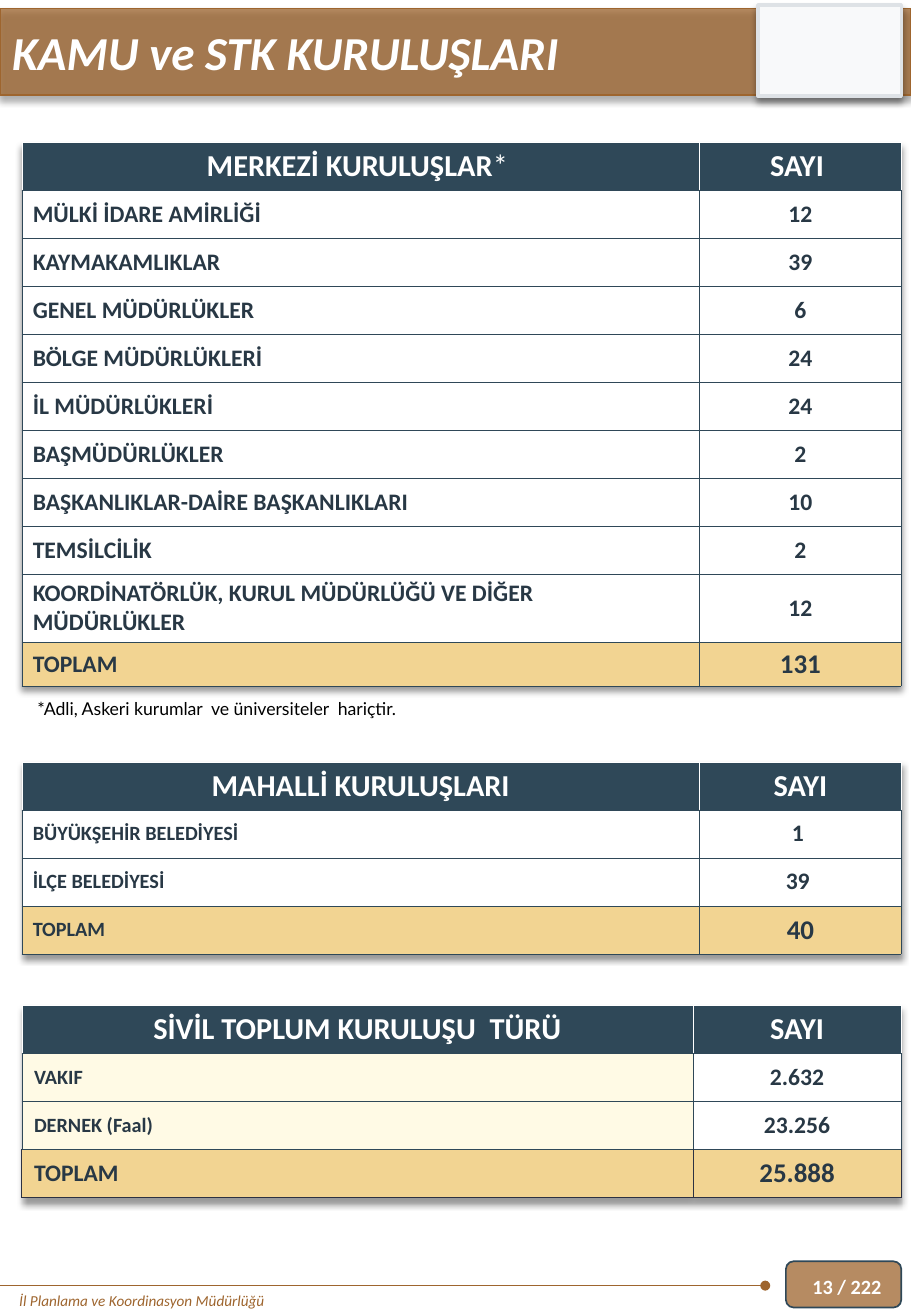
"""Builds the slide of public bodies and civil society organisations with three count tables."""
from pptx import Presentation
from pptx.dml.color import RGBColor
from pptx.enum.shapes import MSO_CONNECTOR, MSO_SHAPE
from pptx.enum.text import MSO_ANCHOR as ANCHOR, PP_ALIGN as ALIGN
from pptx.oxml import parse_xml
from pptx.oxml.ns import nsdecls, qn
from pptx.util import Pt

PX = 4572
NAVY, INK, BROWN, GOLD, CREAM, WHITE = "2F4858", "283845", "9E652E", "F2D492", "FFFAE5", "FFFFFF"
SHADOW = (f'<a:effectLst {nsdecls("a")}><a:outerShdw blurRad="50800" dist="38100" dir="5400000" '
          'algn="t" rotWithShape="0"><a:srgbClr val="000000"><a:alpha val="40000"/></a:srgbClr>'
          '</a:outerShdw></a:effectLst>')


def rgb(color):
    return RGBColor.from_string(color)


def write(tf, text, color, **font):
    r = tf.paragraphs[0].add_run()
    r.text = text
    r.font.color.rgb = rgb(color)
    for name, value in {"name": "Calibri", "bold": False, **font}.items():
        setattr(r.font, name, value)


prs = Presentation()
prs.slide_width, prs.slide_height = 1500 * PX, 2166 * PX
s = prs.slides.add_slide(prs.slide_layouts[5])

panels = [
    (MSO_SHAPE.ROUNDED_RECTANGLE, (1294, 2076, 190, 76), BROWN, 75, NAVY, 1, False),
    (MSO_SHAPE.RECTANGLE, (0, 14, 1500, 142), BROWN, 75, BROWN, 1, True),
    (MSO_SHAPE.RECTANGLE, (1248, 8, 236, 150), "F8F9FA", 100, "DEE2E6", 2, True),
]
for kind, box, fill, opacity, line, width, shaded in panels:
    sp = s.shapes.add_shape(kind, *[v * PX for v in box])
    sp.fill.solid()
    sp.fill.fore_color.rgb = rgb(fill)
    if opacity < 100:
        clr = next(sp.element.iter(qn("a:srgbClr")))
        clr.append(parse_xml(f'<a:alpha {nsdecls("a")} val="{opacity * 1000}"/>'))
    sp.line.color.rgb = rgb(line)
    sp.line.width = Pt(width)
    sp.shadow.inherit = False
    if shaded:
        effects = next(sp.element.iter(qn("a:effectLst")))
        effects.append(parse_xml(SHADOW)[0])

rule = s.shapes.add_connector(MSO_CONNECTOR.STRAIGHT, 1260 * PX, 2116 * PX, 0, 2116 * PX)
rule.line.color.rgb = rgb(BROWN)
rule.line.width = Pt(0.5)
ln = next(rule.element.iter(qn("a:ln")))
ln.append(parse_xml(f'<a:headEnd {nsdecls("a")} type="oval"/>'))
ln.getparent().append(parse_xml(f'<a:effectLst {nsdecls("a")}/>'))

ROW = 79
tables = [
    dict(top=234, cols=(1116, 332), heights=[ROW] * 9 + [112, 72], inset=18, sizes=(14, 14),
         label_fill=WHITE, end=(NAVY, 0.25), rows=[
             ("MERKEZİ KURULUŞLAR", "SAYI "), ("MÜLKİ İDARE AMİRLİĞİ", "12"),
             ("KAYMAKAMLIKLAR", "39"), ("GENEL MÜDÜRLÜKLER", "6"),
             ("BÖLGE MÜDÜRLÜKLERİ", "24"), ("İL MÜDÜRLÜKLERİ", "24"),
             ("BAŞMÜDÜRLÜKLER", "2"), ("BAŞKANLIKLAR-DAİRE BAŞKANLIKLARI", "10"),
             ("TEMSİLCİLİK", "2"),
             ("KOORDİNATÖRLÜK, KURUL MÜDÜRLÜĞÜ VE DİĞER MÜDÜRLÜKLER", "12"),
             ("TOPLAM", "131")]),
    dict(top=1254, cols=(1116, 332), heights=[ROW] * 4, inset=18, sizes=(12, 12),
         label_fill=WHITE, end=(NAVY, 0.25), rows=[
             ("MAHALLİ KURULUŞLARI", "SAYI"), ("BÜYÜKŞEHİR BELEDİYESİ", "1 "),
             ("İLÇE BELEDİYESİ", "39 "), ("TOPLAM", "40")]),
    dict(top=1655, cols=(1105, 343), heights=[ROW] * 4, inset=20, sizes=(12, 14),
         label_fill=CREAM, end=("2D3142", 0.5), rows=[
             ("SİVİL TOPLUM KURULUŞU  TÜRÜ", "SAYI"), ("VAKIF", "2.632"),
             ("DERNEK (Faal)", "23.256"), ("TOPLAM", "25.888")]),
]
grids = []
for t in tables:
    last = len(t["rows"]) - 1
    label_size, total_size = t["sizes"]
    box = (36, t["top"], sum(t["cols"]), sum(t["heights"]))
    frame = s.shapes.add_table(last + 1, 2, *[v * PX for v in box])
    grid = frame.table
    grids.append(grid)
    grid.horz_banding = False
    next(frame.element.iter(qn("a:tblPr"))).insert(0, parse_xml(SHADOW))
    for column, width in zip(grid.columns, t["cols"]):
        column.width = width * PX
    for i, (texts, height) in enumerate(zip(t["rows"], t["heights"])):
        grid.rows[i].height = height * PX
        for j, text in enumerate(texts):
            cell = grid.cell(i, j)
            if i == 0:
                fill, color, size = NAVY, WHITE, 18
            elif i == last:
                fill, color, size = GOLD, INK, (total_size, 16)[j]
            else:
                fill, color, size = (t["label_fill"], WHITE)[j], INK, (label_size, 14)[j]
            cell.fill.solid()
            cell.fill.fore_color.rgb = rgb(fill)
            cell.vertical_anchor = ANCHOR.MIDDLE
            cell.margin_left = cell.margin_right = t["inset"] * PX
            cell.margin_top = cell.margin_bottom = 8 * PX
            write(cell.text_frame, text, color, size=Pt(size), bold=True)
            cell.text_frame.paragraphs[0].alignment = ALIGN.CENTER if i == 0 or j else ALIGN.LEFT
            tc_pr = list(frame.element.iter(qn("a:tcPr")))[2 * i + j]
            for k, side in enumerate(("lnL", "lnR", "lnT", "lnB")):
                edge, width = NAVY, 0.25
                if i == 0 and side != "lnB":
                    edge = WHITE
                elif i == last and side != "lnT":
                    edge, width = t["end"]
                tc_pr.insert(k, parse_xml(
                    f'<a:{side} {nsdecls("a")} w="{int(Pt(width))}"><a:solidFill>'
                    f'<a:srgbClr val="{edge}"/></a:solidFill></a:{side}>'))
write(grids[0].cell(0, 0).text_frame, "* ", WHITE, size=Pt(18))

notes = [
    ((12, 2116, 938, 50), "İl Planlama ve Koordinasyon Müdürlüğü", BROWN, ANCHOR.TOP,
     dict(size=Pt(9), italic=True)),
    ((42, 1138, 1272, 56), "*Adli, Askeri kurumlar  ve üniversiteler  hariçtir.", "000000",
     ANCHOR.TOP, dict(size=Pt(10.5), name="Lato")),
    ((1318, 2076, 182, 84), "13 / 222", WHITE, ANCHOR.MIDDLE, dict(size=Pt(12), bold=True)),
]
for box, text, color, anchor, font in notes:
    tf = s.shapes.add_textbox(*[v * PX for v in box]).text_frame
    tf.word_wrap = True
    tf.vertical_anchor = anchor
    write(tf, text, color, **font)

title = s.shapes.title
title.left, title.top, title.width, title.height = [v * PX for v in (0, 28, 1500, 114)]
title.text_frame.vertical_anchor = ANCHOR.TOP
title.text_frame.paragraphs[0].alignment = ALIGN.LEFT
write(title.text_frame, "KAMU ve STK KURULUŞLARI", WHITE, size=Pt(28), bold=True, italic=True)
title.element.getparent().append(title.element)

prs.save("out.pptx")
